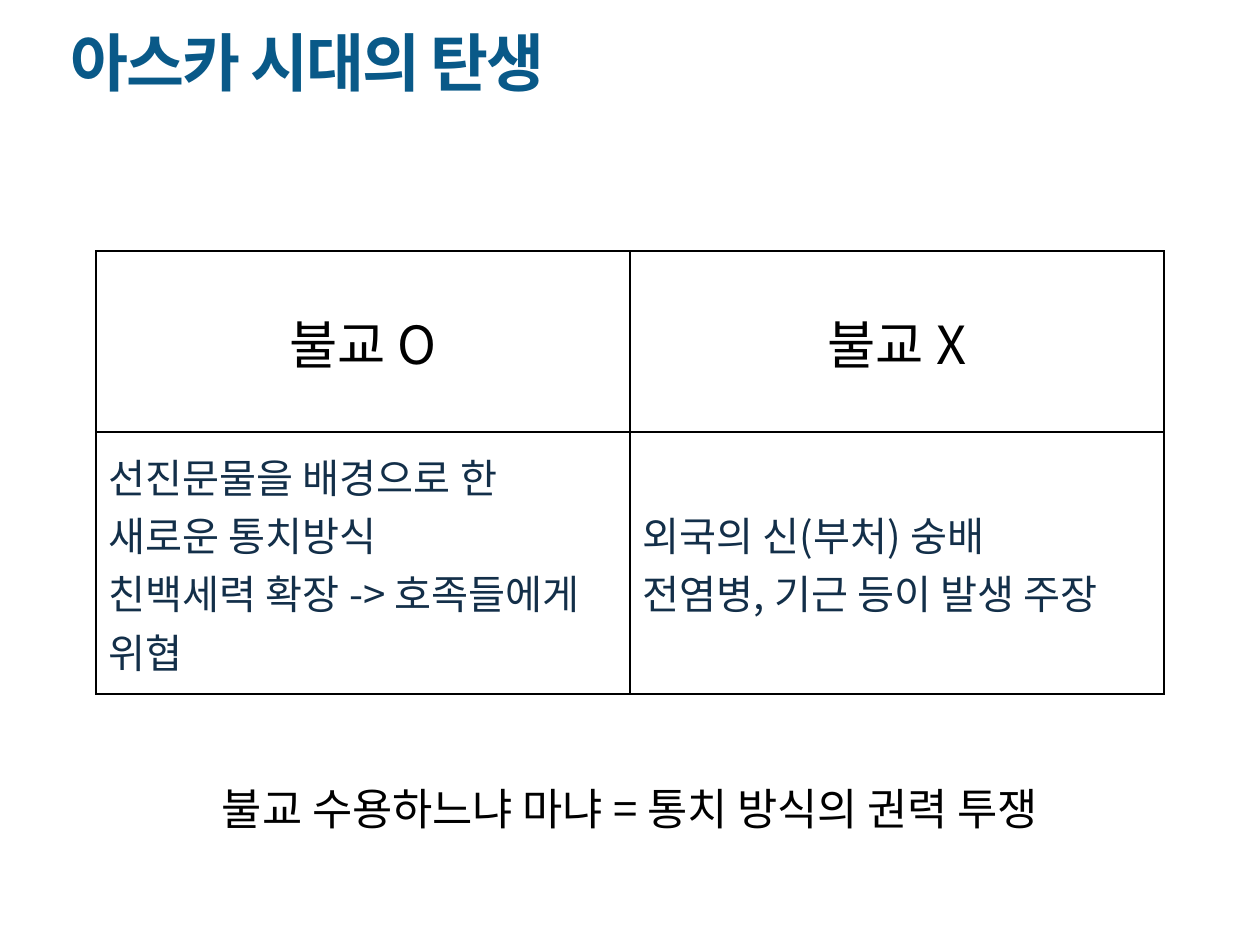
import pptx
import pptx.util
import pptx.dml.color
import pptx.enum.text
import pptx.oxml
import pptx.oxml.ns
from lxml import etree

RGBColor = pptx.dml.color.RGBColor
ALIGN = pptx.enum.text.PP_ALIGN
MIDDLE = pptx.enum.text.MSO_ANCHOR.MIDDLE
qn = pptx.oxml.ns.qn

BLUE = RGBColor(0x09, 0x59, 0x88)
NAVY = RGBColor(0x13, 0x2F, 0x49)
BLACK = RGBColor(0, 0, 0)
FONT = "Noto Sans CJK KR"
PX_PER_INCH = 126

HEADINGS = ["불교 O", "불교 X"]
ARGUMENTS = [
    ["선진문물을 배경으로 한 새로운 통치방식", "친백세력 확장 -> 호족들에게 위협"],
    ["외국의 신(부처) 숭배", "전염병, 기근 등이 발생 주장"],
]


def px(length):
    return pptx.util.Emu(round(length * 914400 / PX_PER_INCH))


def write(frame, lines, size, color, align=ALIGN.LEFT, bold=False):
    """Fill a text frame with one paragraph per line."""
    frame.text = "\n".join(lines)
    style = {"name": FONT, "size": pptx.util.Pt(size), "bold": bold}
    for paragraph in frame.paragraphs:
        paragraph.alignment = align
        for run in paragraph.runs:
            for attribute, value in style.items():
                setattr(run.font, attribute, value)
            run.font.color.rgb = color
            east_asian = etree.SubElement(run.font._element, qn("a:ea"))
            east_asian.set("typeface", FONT)


def place_title(slide, left, top, width, height):
    heading = slide.shapes.title
    box = {"left": left, "top": top, "width": width, "height": height}
    for attribute, value in box.items():
        setattr(heading, attribute, px(value))
    frame = heading.text_frame
    write(frame, ["아스카 시대의 탄생"], 36, BLUE, bold=True)
    frame.vertical_anchor = MIDDLE
    frame.auto_size = pptx.enum.text.MSO_AUTO_SIZE.NONE
    frame.paragraphs[0].line_spacing = 0.9
    frame.paragraphs[0].runs[0].font._element.set("spc", "-120")


def outline(cell):
    """Draw a thin black line on all four sides of a cell."""
    properties = cell._tc.get_or_add_tcPr()
    for index, side in enumerate(("lnL", "lnR", "lnT", "lnB")):
        line = etree.Element(qn(f"a:{side}"), w="12700")
        fill = etree.SubElement(line, qn("a:solidFill"))
        etree.SubElement(fill, qn("a:srgbClr"), val=str(BLACK))
        properties.insert(index, line)


def place_comparison(slide, left, top, width, row_heights):
    height = sum(row_heights)
    table = slide.shapes.add_table(
        2, len(HEADINGS), px(left), px(top), px(width), px(height)).table
    table.first_row = table.horz_banding = False
    for row, row_height in zip(table.rows, row_heights):
        row.height = px(row_height)
    for column, (heading, arguments) in enumerate(zip(HEADINGS, ARGUMENTS)):
        table.columns[column].width = px(width / len(HEADINGS))
        write(table.cell(0, column).text_frame, [heading], 30, BLACK, ALIGN.CENTER)
        write(table.cell(1, column).text_frame, arguments, 23, NAVY)
    for cell in table.iter_cells():
        cell.vertical_anchor = MIDDLE
        cell.fill.background()
        outline(cell)


def place_conclusion(slide, left, top, width, height):
    conclusion = slide.shapes.add_textbox(px(left), px(top), px(width), px(height))
    frame = conclusion.text_frame
    frame.word_wrap = True
    frame.auto_size = pptx.enum.text.MSO_AUTO_SIZE.SHAPE_TO_FIT_TEXT
    write(frame, ["불교 수용하느냐 마냐 = 통치 방식의 권력 투쟁"], 25, BLACK, ALIGN.CENTER)


def main():
    deck = pptx.Presentation()
    deck.slide_width, deck.slide_height = px(1260), px(945)
    slide = deck.slides.add_slide(deck.slide_layouts[5])
    place_title(slide, 58, 20, 968, 93)
    place_comparison(slide, 96, 251, 1068, [181, 262])
    place_conclusion(slide, 99, 776, 1062, 66)
    deck.save("out.pptx")


if __name__ == "__main__":
    main()
